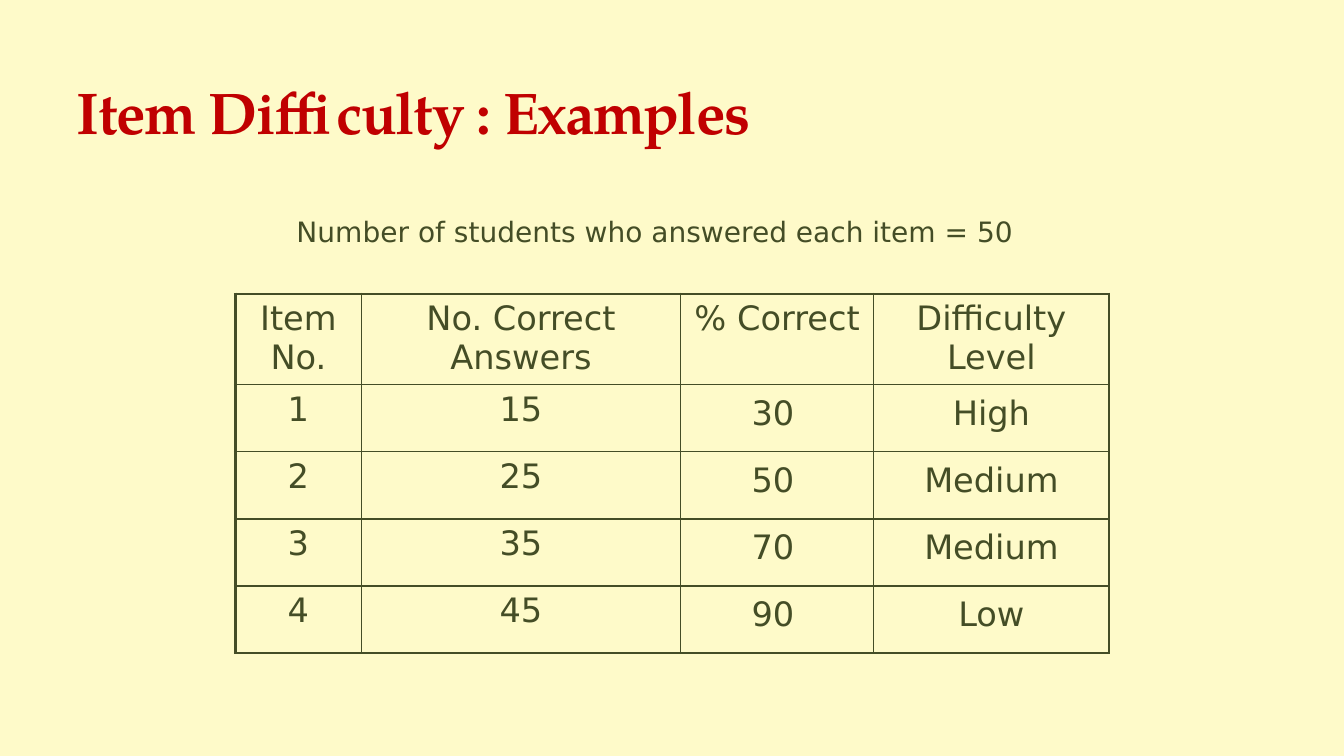
from pptx import Presentation
from pptx.dml.color import RGBColor
from pptx.enum.text import MSO_ANCHOR, PP_ALIGN
from pptx.oxml import parse_xml
from pptx.oxml.ns import nsdecls
from pptx.util import Cm, Pt

# Content
TITLE = "Item Difficulty : Examples"
NOTE = "Number of students who answered each item = 50"
HEADER = ["Item No.", "No. Correct Answers", "% Correct", "Difficulty Level"]
ITEMS = [
    ("1", "15", "30", "High"),
    ("2", "25", "50", "Medium"),
    ("3", "35", "70", "Medium"),
    ("4", "45", "90", "Low"),
]

# Style and layout (cm)
CREAM, OLIVE, RED, OUTLINE = "FEFAC9", "444D26", "C00000", "E0DDB1"
SANS, SERIF = "DejaVu Sans", "TeX Gyre Pagella"
TABLE_LEFT, TABLE_TOP = 5.93, 7.41
COL_W = [3.18, 8.04, 4.87, 5.93]
HEADER_H, ROW_H = 2.28, 1.69
ANSWER_W = {2: 4.66, 3: 5.93}  # columns whose values sit in text boxes
ANSWER_H, ANSWER_DROP = 1.28, 0.05
THICK, THIN = 2.25, 1


def rgb(hex_color):
    return RGBColor.from_string(hex_color)


def add_run(p, text, size, font=SANS, color=OLIVE, bold=False):
    r = p.add_run()
    r.text = text
    r.font.size = Pt(size)
    r.font.name = font
    r.font.bold = bold
    r.font.color.rgb = rgb(color)
    return r


def add_box(s, left, top, width, height, align=PP_ALIGN.CENTER):
    tf = s.shapes.add_textbox(Cm(left), Cm(top), Cm(width), Cm(height)).text_frame
    tf.word_wrap = True
    tf.paragraphs[0].alignment = align
    return tf


def set_borders(cell, **widths):
    tc_pr = cell._tc.get_or_add_tcPr()
    for i, (side, width) in enumerate(widths.items()):
        tc_pr.insert(i, parse_xml(
            f'<a:{side} {nsdecls("a")} w="{Pt(width)}"><a:solidFill>'
            f'<a:srgbClr val="{OLIVE}"/></a:solidFill></a:{side}>'))


prs = Presentation()
prs.slide_width, prs.slide_height = Cm(33.87), Cm(19.05)
s = prs.slides.add_slide(prs.slide_layouts[6])
s.background.fill.solid()
s.background.fill.fore_color.rgb = rgb(CREAM)

# Title with a faint outline and tight spacing
tf = add_box(s, 1.69, 0.42, 30.48, 3.39, PP_ALIGN.LEFT)
tf.vertical_anchor = MSO_ANCHOR.BOTTOM
r = add_run(tf.paragraphs[0], TITLE, 42, SERIF, RED, True)
r_pr = r._r.get_or_add_rPr()
r_pr.set("spc", "-100")
r_pr.insert(0, parse_xml(
    f'<a:ln {nsdecls("a")} w="{Pt(0.25)}"><a:solidFill><a:srgbClr val="{OUTLINE}">'
    '<a:alpha val="25000"/></a:srgbClr></a:solidFill></a:ln>'))

# Table
rows = [HEADER, *ITEMS]
last = len(rows) - 1
table = s.shapes.add_table(
    len(rows), len(COL_W), Cm(TABLE_LEFT), Cm(TABLE_TOP),
    Cm(sum(COL_W)), Cm(HEADER_H + ROW_H * last)).table
table.first_row = table.horz_banding = False
for column, width in zip(table.columns, COL_W):
    column.width = Cm(width)
for i, values in enumerate(rows):
    table.rows[i].height = Cm(ROW_H if i else HEADER_H)
    for j, value in enumerate(values):
        cell = table.cell(i, j)
        cell.fill.background()
        set_borders(cell, lnL=THIN if j else THICK, lnR=THIN,
                    lnT=THIN if i else THICK, lnB=THICK if i == last else THIN)
        if i == 0 or j not in ANSWER_W:
            p = cell.text_frame.paragraphs[0]
            p.alignment = PP_ALIGN.CENTER
            add_run(p, value, 24)

# Note above the table
add_run(add_box(s, 5.5, 5.29, 22.01, 1.1).paragraphs[0], NOTE, 20)

# Answers over the last two columns
for i, item in enumerate(ITEMS):
    top = TABLE_TOP + HEADER_H + ANSWER_DROP + i * ROW_H
    for j, width in ANSWER_W.items():
        tf = add_box(s, TABLE_LEFT + sum(COL_W[:j]), top, width, ANSWER_H)
        add_run(tf.paragraphs[0], item[j], 24)

prs.save("out.pptx")
